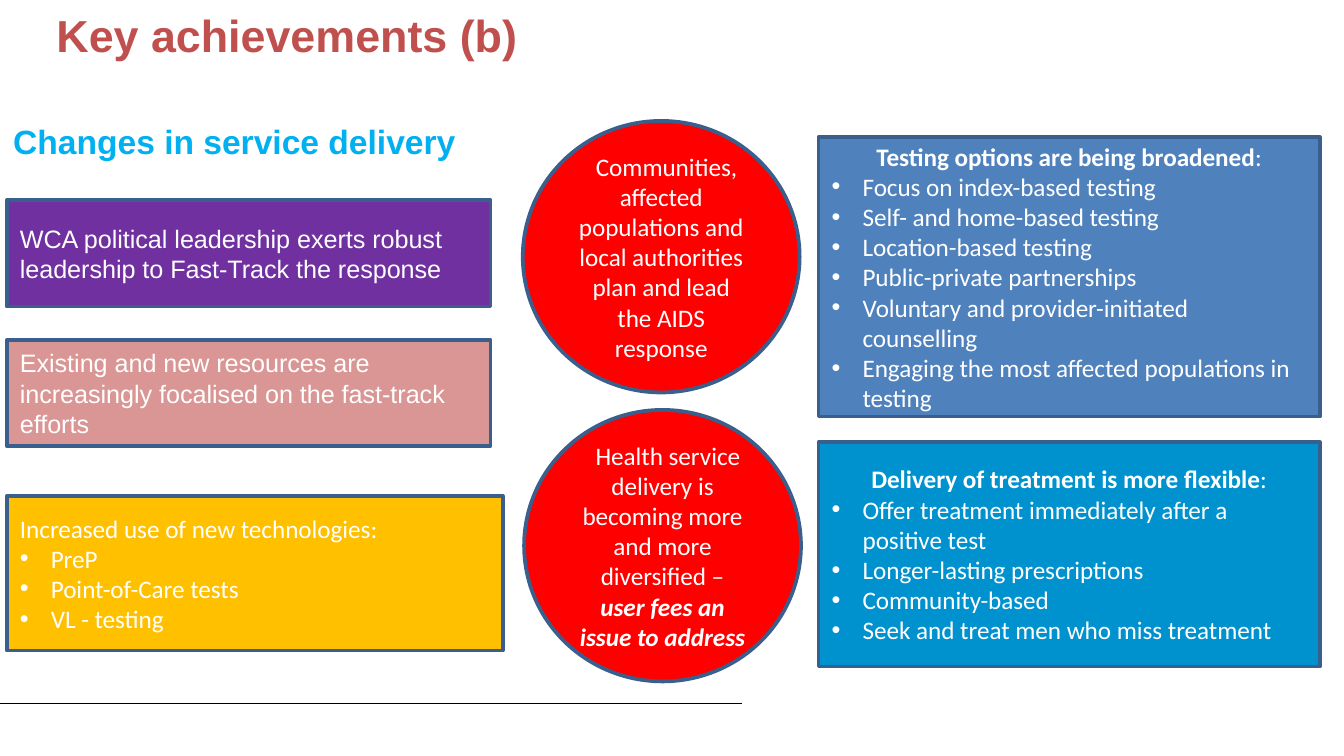
from dataclasses import dataclass
from lxml import etree
from pptx import Presentation
from pptx import util as u
from pptx.dml.color import RGBColor
from pptx.enum import shapes, text
from pptx.oxml.ns import qn

HUES = {
    "title": "C0504D", "head": "00B0F0", "edge": "3A5F8C", "text": "FFFFFF",
    "blue": "4F81BD", "sky": "0092CF", "red": "FF0000", "gold": "FFC000",
    "plum": "7030A0", "rose": "D99694", "rule": "000000",
}
RECT = shapes.MSO_SHAPE.RECTANGLE
OVAL = shapes.MSO_SHAPE.OVAL
WIDE, HIGH = u.Inches(10), u.Inches(5.625)
CELL = WIDE / 100  # square grid, 100 columns across
LEFT, MID, RIGHT = 0.5, 38.9, 60.9
HANG = u.Inches(0.23)
LEAD = u.Inches(0.08)


@dataclass
class Card:
    col: float
    row: float
    cols: float
    rows: float
    hue: str
    intro: list[tuple[str, str]]  # text and style: "b" bold, "i" italic
    items: tuple[str, ...] = ()
    form: int = RECT
    font: str = "Calibri"
    mid: bool = False


CARDS = [
    Card(RIGHT, 10.2, 37.3, 20.8, "blue",
         [("Testing options are being broadened", "b"), (":", "")],
         ("Focus on index-based testing", "Self- and home-based testing",
          "Location-based testing", "Public-private partnerships",
          "Voluntary and provider-initiated counselling",
          "Engaging the most affected populations in testing"), mid=True),
    Card(RIGHT, 32.9, 37.3, 16.7, "sky",
         [("Delivery of treatment is more flexible", "b"), (":", "")],
         ("Offer treatment immediately after a positive test",
          "Longer-lasting prescriptions", "Community-based",
          "Seek and treat men who miss treatment"), mid=True),
    Card(MID, 9, 20.6, 20.2, "red",
         [("Communities, affected populations and local authorities "
           "plan and lead the AIDS response", "")], form=OVAL, mid=True),
    Card(MID + 0.1, 30.5, 20.6, 20.2, "red",
         [("Health service delivery is becoming more and more diversified – ", ""),
          ("user fees an issue to address", "bi")], form=OVAL, mid=True),
    Card(LEFT, 36.9, 36.9, 11.5, "gold",
         [("Increased use of new technologies:", "")],
         ("PreP", "Point-of-Care tests", "VL - testing")),
    Card(LEFT, 14.9, 36, 7.9, "plum",
         [("WCA political leadership exerts robust leadership to "
           "Fast-Track the response", "")], font="Arial"),
    Card(LEFT, 25.3, 36, 7.9, "rose",
         [("Existing and new resources are increasingly focalised on "
           "the fast-track efforts", "")], font="Arial"),
]


def tint(name: str) -> RGBColor:
    return RGBColor.from_string(HUES[name])


def grid(*units: float) -> list[int]:
    """Turn grid units into lengths."""
    return [u.Emu(round(n * CELL)) for n in units]


def style(run, font: str, size: float, hue: str, bold=False, slant=False) -> None:
    run.font.name, run.font.size = font, u.Pt(size)
    run.font.bold, run.font.italic = bold, slant
    run.font.color.rgb = tint(hue)


def bullet(para) -> None:
    props = para._p.get_or_add_pPr()
    props.set("marL", str(HANG))
    props.set("indent", str(-HANG))
    etree.SubElement(props, qn("a:buFont"), typeface="Arial")
    etree.SubElement(props, qn("a:buChar"), char="•")


def draw(slide, card: Card) -> None:
    shape = slide.shapes.add_shape(
        card.form, *grid(card.col, card.row, card.cols, card.rows))
    shape.shadow.inherit = False
    shape.fill.solid()
    shape.fill.fore_color.rgb = tint(card.hue)
    shape.line.color.rgb = tint("edge")
    shape.line.width = u.Pt(2)
    frame = shape.text_frame
    frame.word_wrap = True
    frame.vertical_anchor = text.MSO_ANCHOR.MIDDLE
    para = frame.paragraphs[0]
    para.alignment = text.PP_ALIGN.CENTER if card.mid else text.PP_ALIGN.LEFT
    if card.form == OVAL:
        para._p.get_or_add_pPr().set("indent", str(LEAD))
    for words, look in card.intro:
        run = para.add_run()
        run.text = words
        style(run, card.font, 13.5, "text", "b" in look, "i" in look)
    for item in card.items:
        para = frame.add_paragraph()
        para.text = item
        para.alignment = text.PP_ALIGN.LEFT
        bullet(para)
        style(para.runs[0], card.font, 13.5, "text")


def title(slide) -> None:
    box = slide.shapes.title
    box.left, box.top, box.width, box.height = grid(3.2, 0.1, 63.8, 5)
    frame = box.text_frame
    frame.text = "Key achievements (b)"
    frame.vertical_anchor = text.MSO_ANCHOR.TOP
    frame.auto_size = text.MSO_AUTO_SIZE.NONE
    para = frame.paragraphs[0]
    para.alignment = text.PP_ALIGN.LEFT
    style(para.runs[0], "Arial", 24, "title", bold=True)


def heading(slide) -> None:
    frame = slide.shapes.add_textbox(*grid(0, 9.2, 50, 3.4)).text_frame
    frame.word_wrap = True
    frame.text = "Changes in service delivery"
    para = frame.paragraphs[0]
    para.line_spacing = u.Pt(16.5)
    style(para.runs[0], "Arial", 18, "head", bold=True)


def rule(slide) -> None:
    line = slide.shapes.add_connector(
        shapes.MSO_CONNECTOR.STRAIGHT, *grid(0, 52.3, 55.2, 52.3))
    line.line.color.rgb = tint("rule")
    line.line.width = u.Pt(0.25)
    etree.SubElement(line._element.spPr, qn("a:effectLst"))


def main() -> None:
    deck = Presentation()
    deck.slide_width, deck.slide_height = WIDE, HIGH
    slide = deck.slides.add_slide(deck.slide_layouts.get_by_name("Title Only"))
    rule(slide)
    title(slide)
    heading(slide)
    for card in CARDS:
        draw(slide, card)
    deck.save("out.pptx")


if __name__ == "__main__":
    main()
